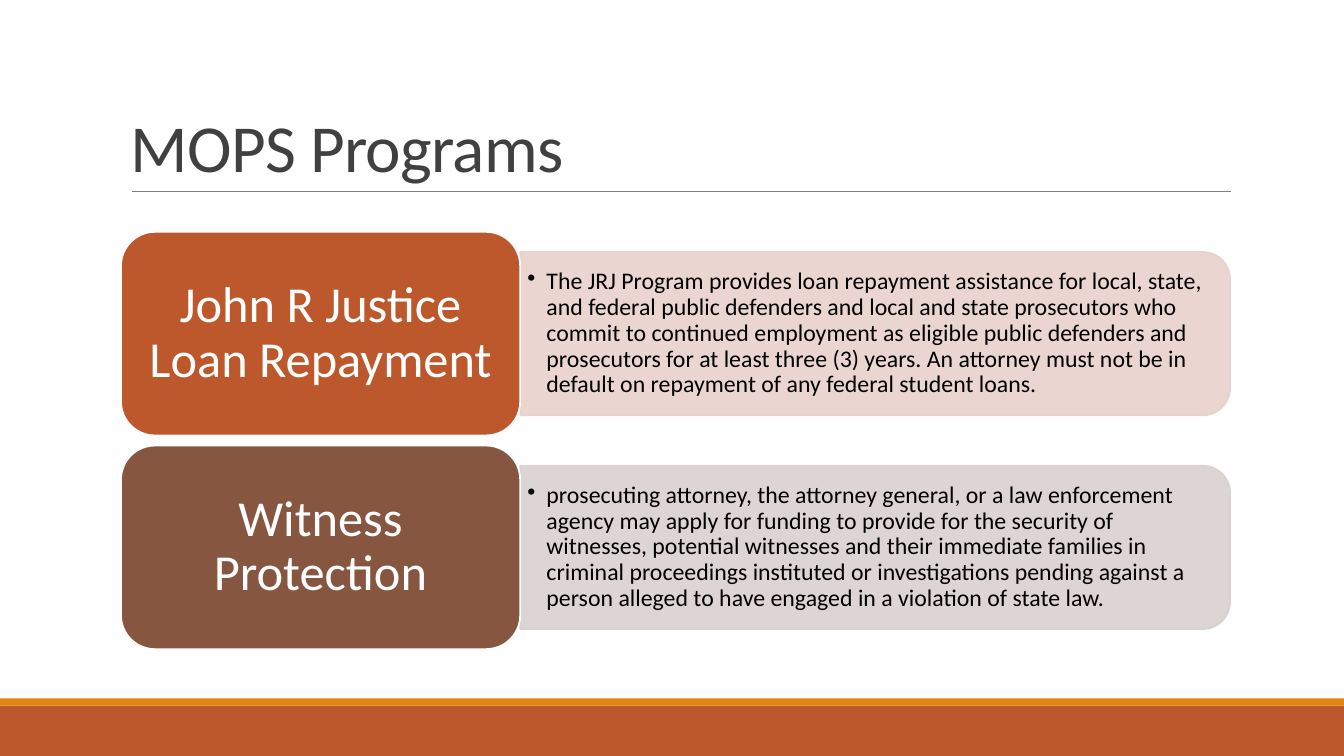
"""Build the MOPS Programs slide with two program rows."""
from lxml.etree import SubElement
from pptx import Presentation
from pptx.dml.color import RGBColor
from pptx.enum.shapes import MSO_CONNECTOR, MSO_SHAPE
from pptx.enum.text import MSO_ANCHOR, PP_ALIGN
from pptx.oxml.ns import qn
from pptx.util import Inches, Pt

WHITE = RGBColor(0xFF, 0xFF, 0xFF)
BLACK = RGBColor(0, 0, 0)
DARK = RGBColor(0x40, 0x40, 0x40)
GRAY = RGBColor(0x80, 0x80, 0x80)
RUST = RGBColor(0xBD, 0x58, 0x2C)
ORANGE = RGBColor(0xE4, 0x83, 0x12)
BROWN = RGBColor(0x86, 0x56, 0x40)
PINK = RGBColor(0xE8, 0xD1, 0xCD)
TAUPE = RGBColor(0xD9, 0xD1, 0xCF)

deck = Presentation()
deck.slide_width, deck.slide_height = Inches(13.33), Inches(7.5)
slide = deck.slides.add_slide(deck.slide_layouts[6])
shapes = slide.shapes


def block(kind, left, top, width, height, fill, line=None, alpha=None):
    shape = shapes.add_shape(kind, Inches(left), Inches(top), Inches(width), Inches(height))
    shape.shadow.inherit = False
    shape.fill.solid()
    shape.fill.fore_color.rgb = fill
    if line is None:
        shape.line.fill.background()
    else:
        shape.line.color.rgb = line
        shape.line.width = Pt(1.25)
    if alpha:
        for color in shape._element.spPr.iter(qn("a:srgbClr")):
            SubElement(color, qn("a:alpha"), val=str(alpha * 1000))
    return shape


def write(shape, text, size, color, side=0.1, edge=0.05, anchor=MSO_ANCHOR.MIDDLE,
          align=PP_ALIGN.LEFT, pitch=0.9, track=None, bullet=False):
    frame = shape.text_frame
    frame.word_wrap = True
    frame.vertical_anchor = anchor
    frame.margin_left = frame.margin_right = Inches(side)
    frame.margin_top = frame.margin_bottom = Inches(edge)
    para = frame.paragraphs[0]
    para.alignment, para.line_spacing = align, pitch
    run = para.add_run()
    run.text = text
    run.font.name, run.font.size = "Calibri", Pt(size)
    run.font.color.rgb = color
    if track:
        run._r.get_or_add_rPr().set("spc", str(track))
    if bullet:
        props = para._p.get_or_add_pPr()
        props.set("marL", str(Inches(0.19)))
        props.set("indent", str(Inches(-0.19)))
        SubElement(props, qn("a:buChar"), char="•")


block(MSO_SHAPE.RECTANGLE, 0, 7, 13.33, 0.5, RUST)
block(MSO_SHAPE.RECTANGLE, 0, 6.93, 13.33, 0.07, ORANGE)

rule = shapes.add_connector(MSO_CONNECTOR.STRAIGHT, Inches(1.31), Inches(1.9),
                            Inches(12.21), Inches(1.9))
rule.line.color.rgb = GRAY
rule.line.width = Pt(0.5)
SubElement(rule._element.spPr, qn("a:effectLst"))

title = shapes.add_textbox(Inches(1.2), Inches(0.31), Inches(11), Inches(1.59))
write(title, "MOPS Programs", 48, DARK, anchor=MSO_ANCHOR.BOTTOM, pitch=0.85, track=-50)

programs = [
    ("John R Justice Loan Repayment", RUST, PINK,
     "The JRJ Program provides loan repayment assistance for local, state, and federal "
     "public defenders and local and state prosecutors who commit to continued employment "
     "as eligible public defenders and prosecutors for at least three (3) years. An attorney "
     "must not be in default on repayment of any federal student loans."),
    ("Witness Protection", BROWN, TAUPE,
     "prosecuting attorney, the attorney general, or a law enforcement agency may apply for "
     "funding to provide for the security of witnesses, potential witnesses and their "
     "immediate families in criminal proceedings instituted or investigations pending "
     "against a person alleged to have engaged in a violation of state law."),
]
for row, (name, dark, pale, detail) in enumerate(programs):
    top = 2.3 + row * 2.12
    panel = block(MSO_SHAPE.ROUND_2_SAME_RECTANGLE, 7.87, top - 2.51, 1.62, 7.04,
                  pale, line=pale, alpha=90)
    panel.rotation = 90
    note = shapes.add_textbox(Inches(5.16), Inches(top + 0.28), Inches(6.96), Inches(1.46))
    write(note, detail, 17, BLACK, side=0.07, edge=0.04, bullet=True)
    label = block(MSO_SHAPE.ROUNDED_RECTANGLE, 1.2, top, 3.96, 2.02, dark, line=WHITE)
    write(label, name, 36, WHITE, side=0.15, edge=0.07, align=PP_ALIGN.CENTER)

deck.save("out.pptx")
